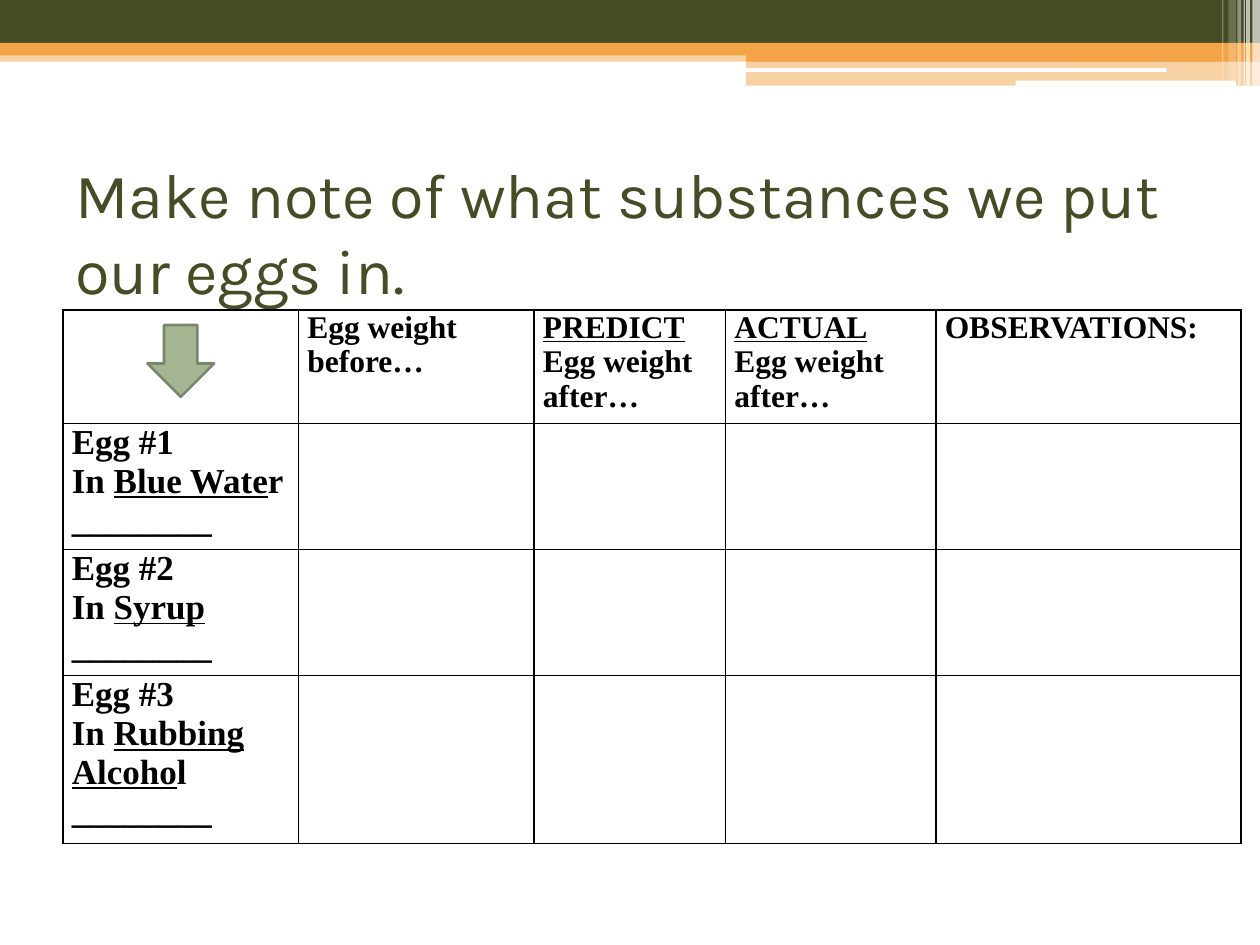
from lxml import etree
from pptx import Presentation
from pptx.dml.color import RGBColor
from pptx.enum.shapes import MSO_SHAPE
from pptx.enum.text import MSO_ANCHOR
from pptx.oxml.ns import qn
from pptx.util import Inches, Pt

RECTANGLE = MSO_SHAPE.RECTANGLE
ROUNDED = MSO_SHAPE.ROUNDED_RECTANGLE
DOWN_ARROW = MSO_SHAPE.DOWN_ARROW
MIDDLE = MSO_ANCHOR.MIDDLE

GREEN, ORANGE, WHITE, BLACK = "444D26", "F3A447", "FFFFFF", "000000"
SAGE, DARK_SAGE = "A5B592", "7A866C"

# left, top, width, height, colour, opacity in percent
BANDS = [
    (0, 0.4, 10, 0.09, ORANGE, 50),
    (0, 0, 10, 0.34, GREEN, 100),
    (0, 0.34, 10, 0.1, ORANGE, 100),
    (5.92, 0.39, 4.08, 0.1, ORANGE, 100),
    (5.92, 0.48, 4.08, 0.2, ORANGE, 50),
]
WHITE_BARS = [(5.91, 0.54, 3.35, 0.03), (8.06, 0.64, 1.75, 0.04)]
# left, width, height, opacity in percent
CORNER_STRIPES = [
    (9.94, 0.06, 0.68, 65),
    (9.89, 0.03, 0.68, 65),
    (9.87, 0.01, 0.68, 60),
    (9.82, 0.03, 0.68, 40),
    (9.75, 0.06, 0.64, 20),
    (9.7, 0.01, 0.64, 30),
]

COLUMN_WIDTHS = [1.87, 1.87, 1.52, 1.67, 2.42]
ROW_HEIGHTS = [0.83, 0.93, 0.93, 1.23]
# Each paragraph is a list of runs: (text, underlined)
HEADERS = [
    [],
    [[("Egg weight before…", False)]],
    [[("PREDICT", True)], [("Egg weight after…", False)]],
    [[("ACTUAL", True), (" ", False)], [("Egg weight after…", False)]],
    [[("OBSERVATIONS:", False)]],
]
# Underlined part of the substance, then the rest of it
SUBSTANCES = [("Blue Wate", "r"), ("Syrup", ""), ("Rubbing Alcoho", "l")]


def rgb(color):
    return RGBColor.from_string(color)


def add_filled_shape(slide, kind, left, top, width, height, color, opacity=100):
    shape = slide.shapes.add_shape(
        kind, Inches(left), Inches(top), Inches(width), Inches(height))
    shape.shadow.inherit = False
    shape.line.fill.background()
    shape.fill.solid()
    shape.fill.fore_color.rgb = rgb(color)
    if opacity < 100:
        color_element = shape.fill._xPr.find(qn("a:solidFill"))[0]
        etree.SubElement(color_element, qn("a:alpha"), val=str(opacity * 1000))
    return shape


def add_header_decoration(slide):
    for left, top, width, height, color, opacity in BANDS:
        add_filled_shape(slide, RECTANGLE, left, top, width, height, color, opacity)
    for bar in WHITE_BARS:
        add_filled_shape(slide, ROUNDED, *bar, WHITE)
    for left, width, height, opacity in CORNER_STRIPES:
        add_filled_shape(slide, RECTANGLE, left, 0, width, height, WHITE, opacity)


def add_title(slide, text):
    box = slide.shapes.add_textbox(Inches(0.5), Inches(1.25), Inches(9), Inches(1.17))
    frame = box.text_frame
    frame.word_wrap = True
    frame.vertical_anchor = MIDDLE
    paragraph = frame.paragraphs[0]
    paragraph.text = text
    paragraph.font.name = "Karla"
    paragraph.font.size = Pt(36)
    paragraph.font.color.rgb = rgb(GREEN)


def style_cell(cell):
    """Give the cell a thin black border, no fill and narrow margins."""
    properties = cell._tc.get_or_add_tcPr()
    for side in ("lnL", "lnR", "lnT", "lnB"):
        line = etree.SubElement(properties, qn(f"a:{side}"), w=str(Pt(1)))
        fill = etree.SubElement(line, qn("a:solidFill"))
        etree.SubElement(fill, qn("a:srgbClr"), val=BLACK)
    cell.fill.background()
    cell.margin_left = cell.margin_right = Inches(0.07)
    cell.margin_top = cell.margin_bottom = 0


def write_cell(cell, paragraphs, size):
    frame = cell.text_frame
    for index, runs in enumerate(paragraphs):
        paragraph = frame.add_paragraph() if index else frame.paragraphs[0]
        paragraph.font.name = "Times New Roman"
        paragraph.font.size = Pt(size)
        paragraph.font.bold = True
        paragraph.font.color.rgb = rgb(BLACK)
        for text, underlined in runs:
            run = paragraph.add_run()
            run.text = text
            run.font.underline = underlined


def egg_label(number, underlined, rest):
    substance = [("In ", False), (underlined, True)]
    if rest:
        substance.append((rest, False))
    return [[(f"Egg #{number}", False)], substance, [("________", False)]]


def add_egg_table(slide):
    table = slide.shapes.add_table(
        len(ROW_HEIGHTS), len(COLUMN_WIDTHS), Inches(0.5), Inches(2.46),
        Inches(sum(COLUMN_WIDTHS)), Inches(sum(ROW_HEIGHTS))).table
    table.first_row = table.horz_banding = False
    for column, width in zip(table.columns, COLUMN_WIDTHS):
        column.width = Inches(width)
    for row, height in zip(table.rows, ROW_HEIGHTS):
        row.height = Inches(height)
    for cell in table.iter_cells():
        style_cell(cell)
    for column, paragraphs in enumerate(HEADERS):
        write_cell(table.cell(0, column), paragraphs, 18)
    for number, (underlined, rest) in enumerate(SUBSTANCES, 1):
        write_cell(table.cell(number, 0), egg_label(number, underlined, rest), 20)


def add_down_arrow(slide):
    arrow = add_filled_shape(slide, DOWN_ARROW, 1.17, 2.58, 0.53, 0.57, SAGE)
    arrow.line.color.rgb = rgb(DARK_SAGE)
    arrow.line.width = Pt(1.5)


def main():
    presentation = Presentation()
    presentation.slide_width = Inches(10)
    presentation.slide_height = Inches(7.5)
    slide = presentation.slides.add_slide(presentation.slide_layouts[6])
    add_header_decoration(slide)
    add_title(slide, "Make note of what substances we put our eggs in.")
    add_egg_table(slide)
    add_down_arrow(slide)
    presentation.save("out.pptx")


if __name__ == "__main__":
    main()
